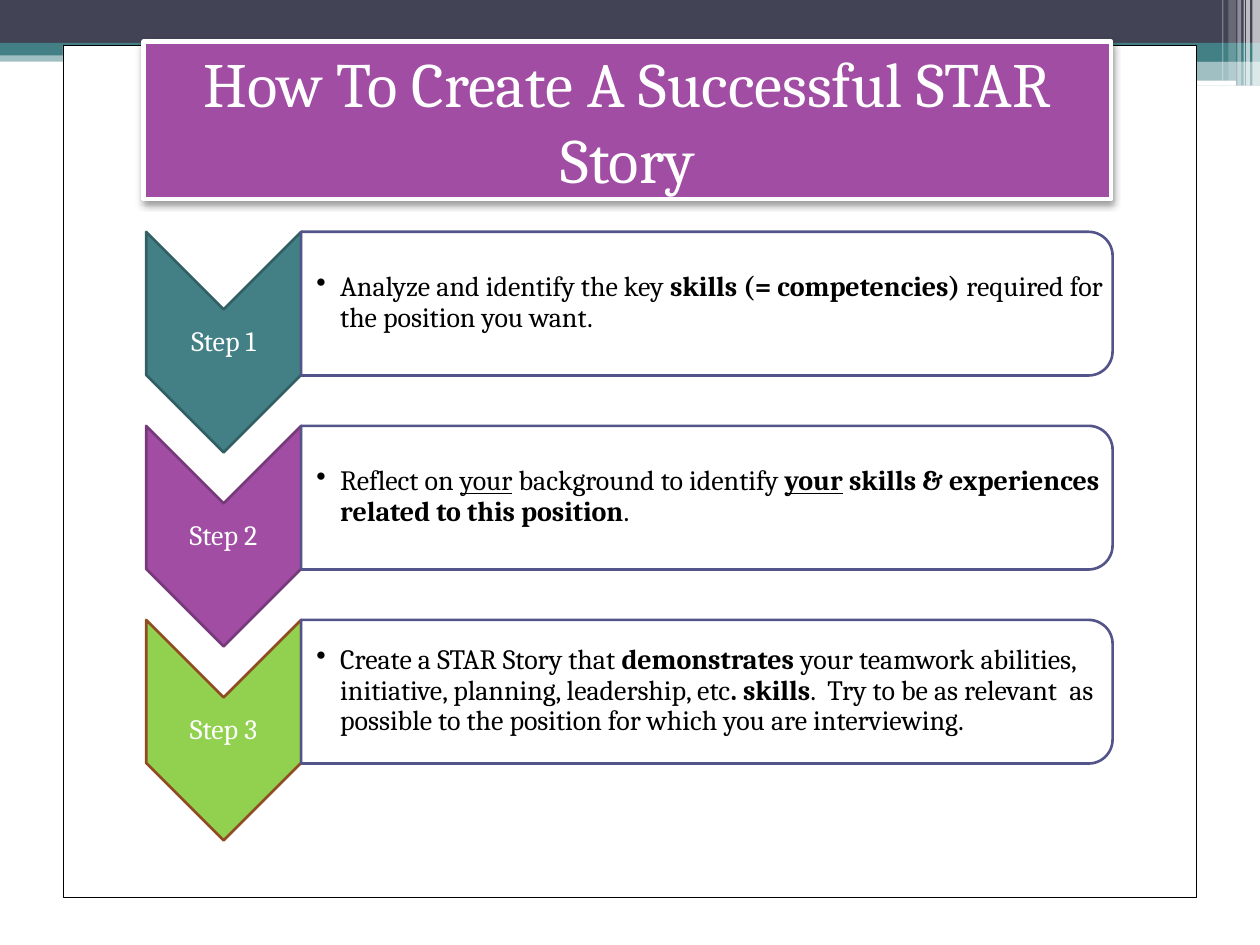
from lxml.etree import SubElement
from pptx import Presentation
from pptx.dml.color import RGBColor
from pptx.enum.shapes import MSO_SHAPE
from pptx.enum.text import MSO_ANCHOR, MSO_AUTO_SIZE, PP_ALIGN
from pptx.oxml.ns import qn
from pptx.util import Inches, Pt

WHITE = RGBColor(0xFF, 0xFF, 0xFF)
BLACK = RGBColor(0, 0, 0)
TEAL = RGBColor(0x43, 0x80, 0x86)
SLATE = RGBColor(0x42, 0x44, 0x56)
PURPLE = RGBColor(0xA0, 0x4D, 0xA3)
GREEN = RGBColor(0x92, 0xD0, 0x50)
INDIGO = RGBColor(0x53, 0x54, 0x8A)
DARK_TEAL = RGBColor(0x32, 0x5F, 0x63)
DARK_PURPLE = RGBColor(0x76, 0x39, 0x79)
BROWN = RGBColor(0x91, 0x4B, 0x21)

FONT = "Cambria"
TITLE = "How To Create A Successful STAR Story"
BOLD, UNDERLINE = {"bold": True}, {"underline": True}
STEPS = [
    ("Step 1", TEAL, DARK_TEAL, [
        ("Analyze and identify the key ", {}),
        ("skills (= competencies) ", BOLD),
        ("required for the position you want.", {})]),
    ("Step 2", PURPLE, DARK_PURPLE, [
        ("Reflect on ", {}),
        ("your", UNDERLINE),
        (" background to identify ", {}),
        ("your", BOLD | UNDERLINE),
        (" skills & experiences related to this position", BOLD),
        (".", {})]),
    ("Step 3", GREEN, BROWN, [
        ("Create a STAR Story that ", {}),
        ("demonstrates", BOLD),
        (" your teamwork abilities, initiative, planning, leadership, etc", {}),
        (". skills", BOLD),
        (".  Try to be as relevant  as possible to the position "
         "for which you are interviewing.", {})]),
]
BANDS = [
    (0, 0.4, 10, 0.09, TEAL, 50),
    (0, 0, 10, 0.34, SLATE, 100),
    (0, 0.34, 10, 0.1, TEAL, 100),
    (5.92, 0.39, 4.08, 0.1, TEAL, 100),
    (5.92, 0.48, 4.08, 0.2, TEAL, 50),
]
STRIPES = [
    (9.94, 0.06, 0.68, 65), (9.89, 0.03, 0.68, 65), (9.87, 0.01, 0.68, 60),
    (9.82, 0.03, 0.68, 40), (9.75, 0.06, 0.64, 20), (9.7, 0.01, 0.64, 30),
]
STEP_TOP, STEP_GAP = 1.84, 1.54
CHEVRON_LEFT, CHEVRON_W, CHEVRON_H = 1.16, 1.23, 1.75
PANEL_W, PANEL_H = 6.44, 1.14


def paint(shape, color, alpha=100, line=None, width=0):
    shape.fill.solid()
    shape.fill.fore_color.rgb = color
    if alpha < 100:
        clr = shape.element.spPr.find(qn("a:solidFill"))[0]
        SubElement(clr, qn("a:alpha"), val=str(alpha * 1000))
    if line is None:
        shape.line.fill.background()
    else:
        shape.line.color.rgb = line
        shape.line.width = Pt(width)


def add_shape(s, kind, box, *style):
    shape = s.shapes.add_shape(kind, *map(Inches, box))
    shape.shadow.inherit = False
    paint(shape, *style)
    return shape


def add_turned(s, kind, box, *style):
    x, y, w, h = box
    turned = (x + (w - h) / 2, y + (h - w) / 2, h, w)
    add_shape(s, kind, turned, *style).rotation = 90


def write(p, runs, size, color):
    for text, extra in runs:
        r = p.add_run()
        r.text = text
        r.font.color.rgb = color
        for name, value in ({"name": FONT, "size": Pt(size)} | extra).items():
            setattr(r.font, name, value)


def add_text(s, box, left_inset, runs, color):
    tf = s.shapes.add_textbox(*map(Inches, box)).text_frame
    small = Inches(0.01)
    frame = {"word_wrap": True, "vertical_anchor": MSO_ANCHOR.MIDDLE,
             "margin_left": Inches(left_inset), "margin_top": small,
             "margin_right": small, "margin_bottom": small}
    for name, value in frame.items():
        setattr(tf, name, value)
    p = tf.paragraphs[0]
    p.line_spacing = 0.9
    write(p, runs, 16, color)
    return p


def add_bullet(p, indent):
    pPr = p._p.get_or_add_pPr()
    pPr.set("marL", str(Inches(indent)))
    pPr.set("indent", str(-Inches(indent)))
    SubElement(pPr, qn("a:buChar"), char="•")


def add_backdrop(s):
    for *box, color, alpha in BANDS:
        add_shape(s, MSO_SHAPE.RECTANGLE, box, color, alpha)
    add_shape(s, MSO_SHAPE.ROUNDED_RECTANGLE, (8.06, 0.64, 1.75, 0.04), WHITE)
    for x, w, h, alpha in STRIPES:
        add_shape(s, MSO_SHAPE.RECTANGLE, (x, 0, w, h), WHITE, alpha)
    add_shape(s, MSO_SHAPE.RECTANGLE, (0.5, 0.36, 9, 6.76),
              WHITE, 100, BLACK, 0.5)


def format_title(s):
    title = s.shapes.title
    s.shapes.element.append(title.element)
    place = {"left": 1.14, "top": 0.33, "width": 7.68, "height": 1.25}
    for name, value in place.items():
        setattr(title, name, Inches(value))
    paint(title, PURPLE, 100, WHITE, 2.5)
    effects = SubElement(title.element.spPr, qn("a:effectLst"))
    shadow = SubElement(effects, qn("a:outerShdw"), blurRad=str(Pt(4.1)),
                        dist=str(Pt(2)), dir="5400000", rotWithShape="0")
    clr = SubElement(shadow, qn("a:srgbClr"), val=str(BLACK))
    SubElement(clr, qn("a:alpha"), val="40000")
    tf = title.text_frame
    tf.word_wrap = True
    tf.auto_size = MSO_AUTO_SIZE.NONE
    tf.vertical_anchor = MSO_ANCHOR.MIDDLE
    p = tf.paragraphs[0]
    p.alignment = PP_ALIGN.CENTER
    write(p, [(TITLE, {})], 36, WHITE)


def add_step(s, index, label, fill, line, runs):
    y = STEP_TOP + index * STEP_GAP
    panel_left = CHEVRON_LEFT + CHEVRON_W
    add_turned(s, MSO_SHAPE.CHEVRON, (CHEVRON_LEFT, y, CHEVRON_W, CHEVRON_H),
               fill, 100, line, 1.5)
    p = add_text(s, (CHEVRON_LEFT, y + 0.61, CHEVRON_W, 0.53), 0.01,
                 [(label, {})], WHITE)
    p.alignment = PP_ALIGN.CENTER
    add_turned(s, MSO_SHAPE.ROUND_2_SAME_RECTANGLE,
               (panel_left, y, PANEL_W, PANEL_H), WHITE, 90, INDIGO, 1.5)
    p = add_text(s, (panel_left, y + 0.05, 6.39, 1.03), 0.12, runs, BLACK)
    add_bullet(p, 0.19)


def main():
    prs = Presentation()
    prs.slide_width, prs.slide_height = Inches(10), Inches(7.5)
    s = prs.slides.add_slide(prs.slide_layouts[5])
    add_backdrop(s)
    format_title(s)
    for index, step in enumerate(STEPS):
        add_step(s, index, *step)
    prs.save("out.pptx")


if __name__ == "__main__":
    main()
